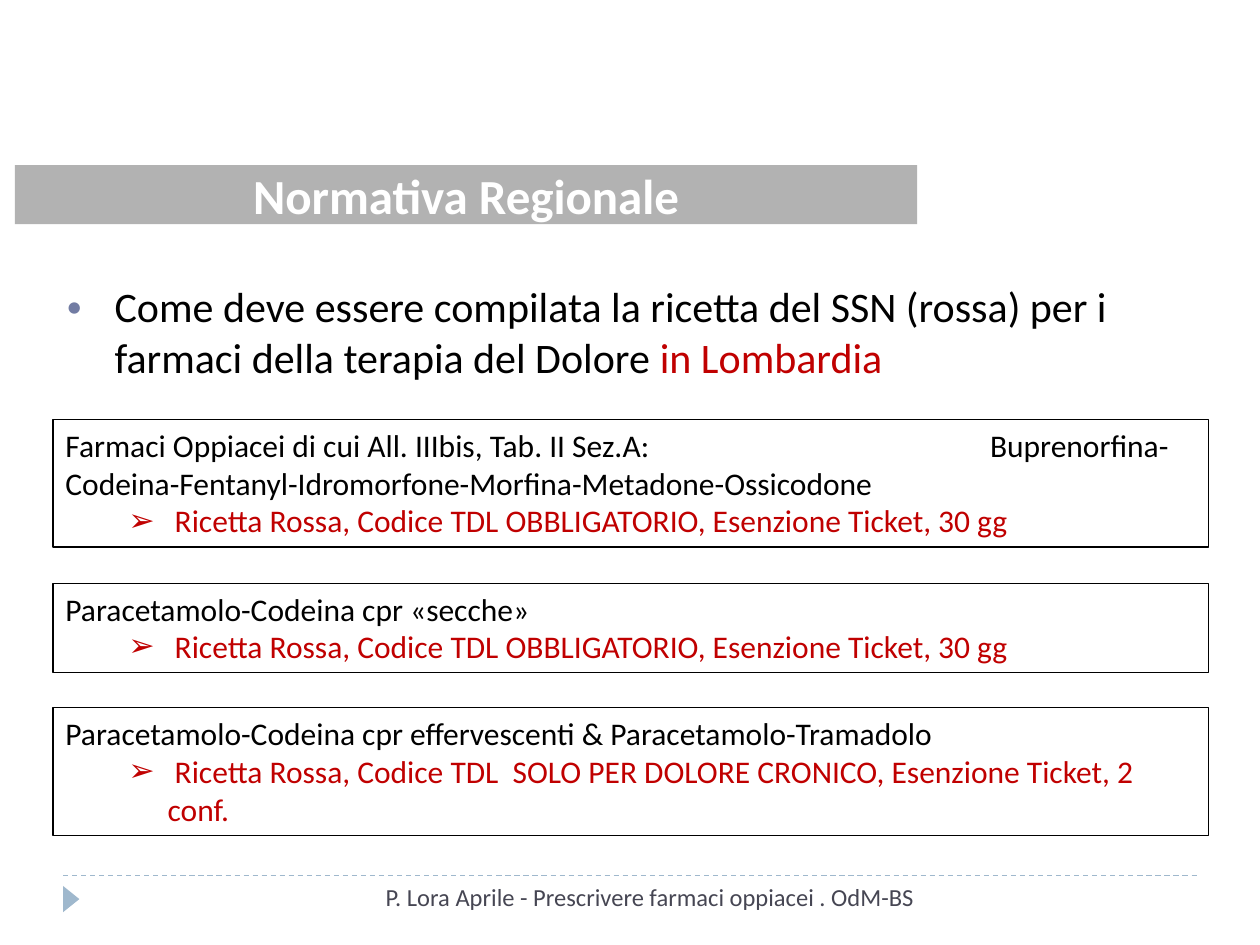
from lxml.etree import SubElement
from pptx import Presentation
from pptx.dml.color import RGBColor
from pptx.enum.dml import MSO_LINE
from pptx.enum.shapes import MSO_CONNECTOR, MSO_SHAPE
from pptx.enum.text import MSO_ANCHOR, MSO_AUTO_SIZE, PP_ALIGN
from pptx.oxml.ns import qn
from pptx.util import Cm, Pt

BLACK = RGBColor(0x00, 0x00, 0x00)
WHITE = RGBColor(0xFF, 0xFF, 0xFF)
RED = RGBColor(0xC0, 0x00, 0x00)
GREY = RGBColor(0xB2, 0xB2, 0xB2)
LIGHT_BLUE = RGBColor(0x9F, 0xB8, 0xCD)
SLATE = RGBColor(0x46, 0x46, 0x53)
BULLET_BLUE = RGBColor(0x72, 0x7C, 0xA3)

RULES = [
    (8.46, 2.57,
     "Farmaci Oppiacei di cui All. IIIbis, Tab. II Sez.A:\t"
     "Buprenorfina-Codeina-Fentanyl-Idromorfone-Morfina-Metadone-Ossicodone",
     " Ricetta Rossa, Codice TDL OBBLIGATORIO, Esenzione Ticket, 30 gg"),
    (11.76, 1.8,
     "Paracetamolo-Codeina cpr «secche»",
     " Ricetta Rossa, Codice TDL OBBLIGATORIO, Esenzione Ticket, 30 gg"),
    (14.27, 2.57,
     "Paracetamolo-Codeina cpr effervescenti & Paracetamolo-Tramadolo",
     " Ricetta Rossa, Codice TDL  SOLO PER DOLORE CRONICO, Esenzione Ticket, 2 conf."),
]


class SlideBuilder:
    font = "Calibri"

    def __init__(self, slide):
        self.slide = slide

    def run(self, paragraph, text, size, color, bold=False):
        run = paragraph.add_run()
        run.text = text
        run.font.name = self.font
        run.font.size = Pt(size)
        run.font.bold = bold
        run.font.color.rgb = color

    def bullet(self, paragraph, character, margin, hanging, color=None, percent=100):
        properties = paragraph._p.get_or_add_pPr()
        properties.set("marL", str(Cm(margin)))
        properties.set("indent", str(-Cm(hanging)))
        if color is not None:
            bullet_color = SubElement(properties, qn("a:buClr"))
            SubElement(bullet_color, qn("a:srgbClr"), val=str(color))
        SubElement(properties, qn("a:buSzPct"), val=str(percent * 1000))
        SubElement(properties, qn("a:buFont"), typeface=self.font)
        SubElement(properties, qn("a:buChar"), char=character)

    def tab_stop(self, paragraph, position):
        tabs = SubElement(paragraph._p.get_or_add_pPr(), qn("a:tabLst"))
        SubElement(tabs, qn("a:tab"), pos=str(Cm(position)), algn="l")

    def text_box(self, left, top, width, height):
        box = self.slide.shapes.add_textbox(Cm(left), Cm(top), Cm(width), Cm(height))
        box.text_frame.word_wrap = True
        return box.text_frame

    def shape(self, kind, left, top, width, height, fill=None, line=None):
        shape = self.slide.shapes.add_shape(kind, Cm(left), Cm(top), Cm(width), Cm(height))
        shape.shadow.inherit = False
        if fill is None:
            shape.fill.background()
        else:
            shape.fill.solid()
            shape.fill.fore_color.rgb = fill
        if line is None:
            shape.line.fill.background()
        else:
            shape.line.color.rgb = line
            shape.line.width = Pt(0.75)
        return shape

    def dashed_line(self, left, right, top, color):
        line = self.slide.shapes.add_connector(
            MSO_CONNECTOR.STRAIGHT, Cm(left), Cm(top), Cm(right), Cm(top))
        line.line.color.rgb = color
        line.line.width = Pt(0.75)
        line.line.dash_style = MSO_LINE.DASH
        SubElement(line._element.spPr, qn("a:effectLst"))

    def footer(self, text):
        self.dashed_line(1.27, 24.13, 17.65, LIGHT_BLUE)
        marker = self.shape(MSO_SHAPE.ISOSCELES_TRIANGLE, 1.17, 17.96, 0.53, 0.33, LIGHT_BLUE)
        marker.rotation = 90
        paragraph = self.text_box(7.11, 17.65, 11.99, 1.02).paragraphs[0]
        paragraph.alignment = PP_ALIGN.CENTER
        self.run(paragraph, text, 14, SLATE)

    def title(self, text):
        bar = self.shape(MSO_SHAPE.RECTANGLE, 0.3, 3.33, 18.19, 1.19, GREY)
        bar.text_frame.vertical_anchor = MSO_ANCHOR.MIDDLE
        paragraph = bar.text_frame.paragraphs[0]
        paragraph.alignment = PP_ALIGN.CENTER
        self.run(paragraph, text, 28, WHITE, bold=True)

    def question(self, text, emphasis):
        paragraph = self.text_box(1.09, 5.54, 23.39, 2.54).paragraphs[0]
        paragraph.space_before = Pt(6)
        self.bullet(paragraph, "•", 0.97, 0.97, BULLET_BLUE, 76)
        self.run(paragraph, text, 24, BLACK)
        self.run(paragraph, emphasis, 24, RED)

    def rule_box(self, top, height, drugs, prescription):
        box = self.shape(MSO_SHAPE.RECTANGLE, 1.07, top, 23.29, height, line=BLACK)
        frame = box.text_frame
        frame.word_wrap = True
        frame.auto_size = MSO_AUTO_SIZE.SHAPE_TO_FIT_TEXT
        frame.vertical_anchor = MSO_ANCHOR.TOP
        heading = frame.paragraphs[0]
        heading.alignment = PP_ALIGN.LEFT
        if "\t" in drugs:
            self.tab_stop(heading, 18.64)
        self.run(heading, drugs, 18, BLACK)
        detail = frame.add_paragraph()
        detail.alignment = PP_ALIGN.LEFT
        detail.level = 1
        self.bullet(detail, "➢", 2.06, 0.79)
        self.run(detail, prescription, 18, RED)


def main():
    presentation = Presentation()
    presentation.slide_width = Cm(25.4)
    presentation.slide_height = Cm(19.05)
    builder = SlideBuilder(presentation.slides.add_slide(presentation.slide_layouts[6]))
    builder.footer("P. Lora Aprile - Prescrivere farmaci oppiacei . OdM-BS")
    builder.question(
        "Come deve essere compilata la ricetta del SSN (rossa) per i "
        "farmaci della terapia del Dolore ", "in Lombardia")
    for rule in RULES:
        builder.rule_box(*rule)
    builder.title("Normativa Regionale")
    presentation.save("out.pptx")


if __name__ == "__main__":
    main()
